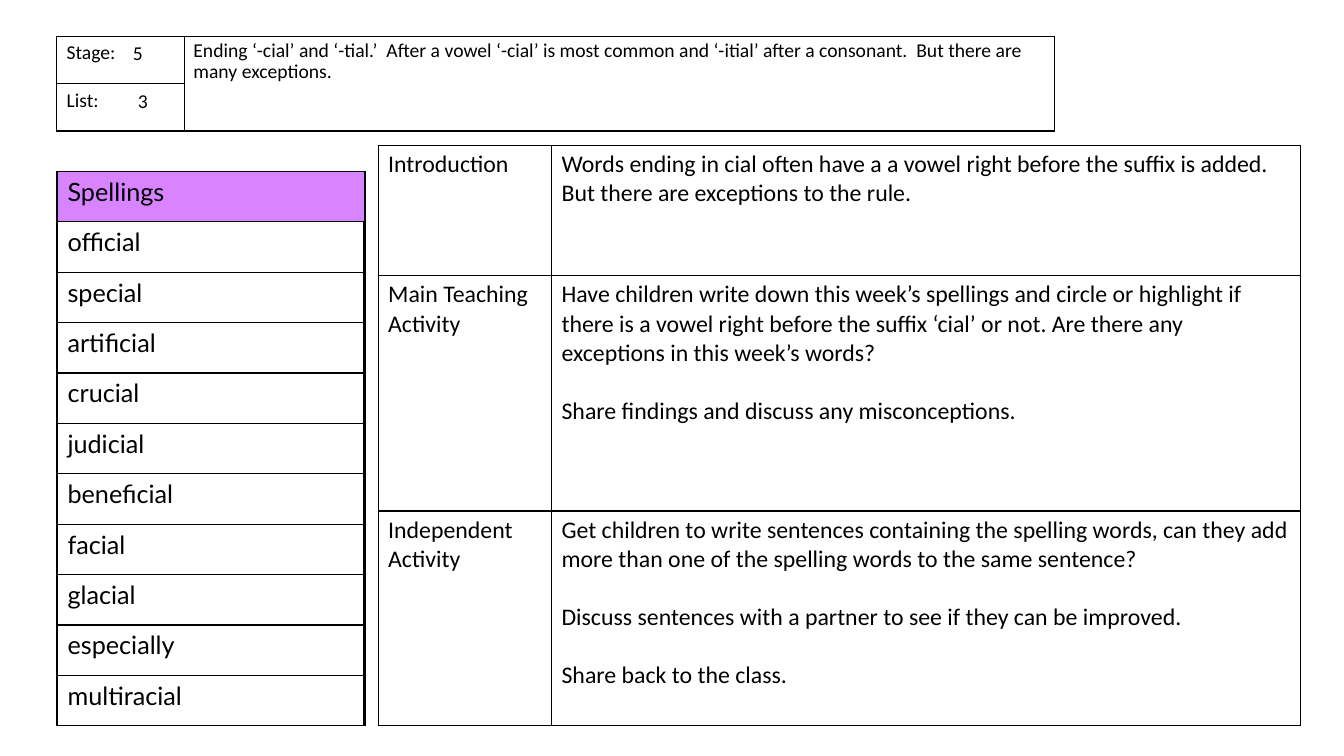
from lxml import etree
from pptx import Presentation
from pptx import util as u
from pptx.dml.color import RGBColor
from pptx.enum import text as t
from pptx.oxml.ns import qn

PX = 9144  # EMU per px, 100 px to the inch
COLORS = {"ink": "000000", "heading": "D883FF", "page": "FFFFFF"}
BODY_FONT, WORD_FONT = "Calibri", "Lato"

RULE = ("Ending ‘-cial’ and ‘-tial.’  After a vowel ‘-cial’ is most common "
        "and ‘-itial’ after a consonant.  But there are many exceptions.")
SPELLINGS = ["Spellings", "official", "special", "artificial", "crucial", "judicial",
             "beneficial", "facial", "glacial", "especially", "multiracial"]
LESSON = [
    ("Introduction", [
        "Words ending in cial often have a a vowel right before the suffix is added. "
        "But there are exceptions to the rule."]),
    ("Main Teaching Activity", [
        "Have children write down this week’s spellings and circle or highlight if there is "
        "a vowel right before the suffix ‘cial’ or not. Are there any exceptions in this "
        "week’s words?",
        "Share findings and discuss any misconceptions."]),
    ("Independent Activity", [
        "Get children to write sentences containing the spelling words, can they add more "
        "than one of the spelling words to the same sentence?",
        "Discuss sentences with a partner to see if they can be improved.",
        "Share back to the class."]),
]


def px(*lengths):
    return [u.Emu(length * PX) for length in lengths]


def write(frame, paragraphs, size, font=BODY_FONT, spacing=None, gap=0):
    """Fill a text frame; gap is the space in points between paragraphs."""
    frame.word_wrap = True
    for index, words in enumerate(paragraphs):
        para = frame.paragraphs[0] if index == 0 else frame.add_paragraph()
        para.space_before = u.Pt(gap if index else 0)
        if spacing:
            para.line_spacing = spacing
        span = para.add_run()
        span.text = words
        span.font.name, span.font.size = font, u.Pt(size)
        span.font.color.rgb = RGBColor.from_string(COLORS["ink"])


def add_label(page, box, words):
    frame = page.shapes.add_textbox(*px(*box)).text_frame
    frame.vertical_anchor = t.MSO_ANCHOR.TOP
    write(frame, [words], 14, spacing=0.9)


def style_cell(cell, fill):
    properties = cell._tc.get_or_add_tcPr()
    for side in ("lnL", "lnR", "lnT", "lnB"):
        line = etree.SubElement(properties, qn("a:" + side), w=str(u.Pt(1)))
        solid = etree.SubElement(line, qn("a:solidFill"))
        etree.SubElement(solid, qn("a:srgbClr"), val=COLORS["ink"])
    if fill:
        cell.fill.solid()
        cell.fill.fore_color.rgb = RGBColor.from_string(fill)
    else:
        cell.fill.background()


def add_grid(page, left, top, widths, heights, heading=None):
    """Add a plain ruled table; heading is the fill of its first row."""
    table = page.shapes.add_table(
        len(heights), len(widths), *px(left, top, sum(widths), sum(heights))).table
    table.first_row = table.horz_banding = False
    for column, width in zip(table.columns, px(*widths)):
        column.width = width
    for index, (row, height) in enumerate(zip(table.rows, px(*heights))):
        row.height = height
        for cell in row.cells:
            style_cell(cell, heading if index == 0 else None)
    return table


def add_header(page, left, top, width, height):
    label_width, row = 127, height // 2
    table = add_grid(page, left, top, [label_width, width - label_width], [row, height - row])
    table.cell(0, 1).merge(table.cell(1, 1))
    for index, name in enumerate(["Stage:", "List:"]):
        write(table.cell(index, 0).text_frame, [name], 14)
    # Values beside the labels, and the spelling rule
    add_label(page, (left + 66, top + 2, 47, 40), "5")
    add_label(page, (left + 71, top + 50, 47, 40), "3")
    add_label(page, (left + label_width - 1, top - 1, width - label_width + 1, height), RULE)


def add_spellings(page, left, top, width, height):
    count = len(SPELLINGS)
    # Two ruled grids one px apart give the heavier edges; the front one holds the words
    for offset in (0, 1):
        table = add_grid(page, left + offset, top, [width], [height // count] * count,
                         COLORS["heading"])
    for index, word in enumerate(SPELLINGS):
        write(table.cell(index, 0).text_frame, [word], 18, font=WORD_FONT)


def add_lesson(page, left, top, width, height):
    name_width, first, second = 172, 129, 234
    table = add_grid(page, left, top, [name_width, width - name_width],
                     [first, second, height - first - second])
    for index, (name, steps) in enumerate(LESSON):
        write(table.cell(index, 0).text_frame, [name], 17)
        write(table.cell(index, 1).text_frame, steps, 17, gap=20.7)


def main():
    deck = Presentation()
    deck.slide_width, deck.slide_height = px(1333, 750)
    page = deck.slides.add_slide(deck.slide_layouts[6])
    page.background.fill.solid()
    page.background.fill.fore_color.rgb = RGBColor.from_string(COLORS["page"])

    add_header(page, 56, 36, 990, 94)
    add_lesson(page, 375, 144, 915, 576)
    add_spellings(page, 56, 170, 305, 550)
    deck.save("out.pptx")


if __name__ == "__main__":
    main()
